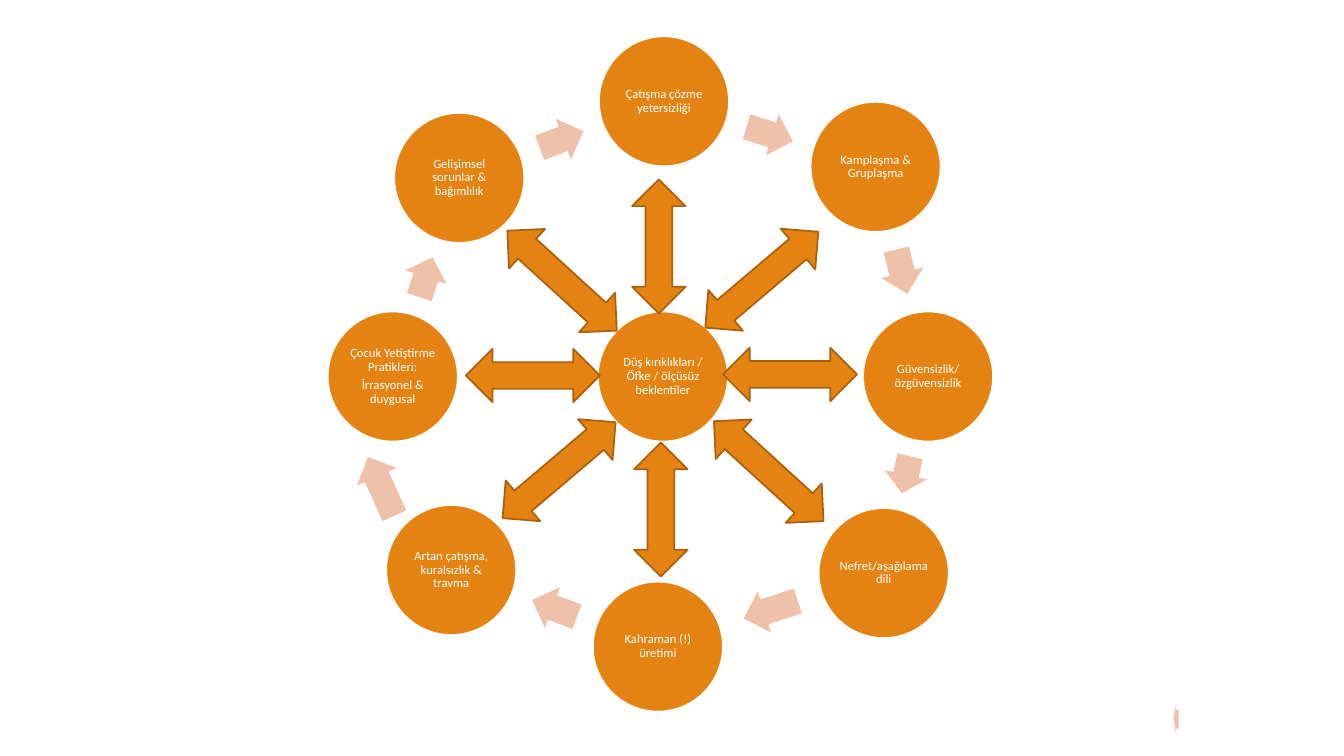
from math import atan2, degrees, hypot

from pptx import Presentation
from pptx.dml.color import RGBColor
from pptx.enum.shapes import MSO_SHAPE
from pptx.enum.text import MSO_ANCHOR, PP_ALIGN
from pptx.util import Inches, Pt

WIDTH, HEIGHT = Inches(13.33), Inches(7.5)
COLUMN, ROW = WIDTH / 100, HEIGHT / 100
COLORS = {"orange": "E48312", "brown": "A9610D", "peach": "EFC1AB", "white": "FFFFFF"}
DIAMETER = 17.2 * ROW
CYCLE_THICKNESS = 5.73 * ROW
CYCLE_GAP_SHARE = 0.53
SPOKE_THICKNESS = 7.07 * ROW
STRAIGHT_LENGTH, DIAGONAL_LENGTH = 17.73 * ROW, 19.6 * ROW

HUB = ("Düş kırıklıkları / Öfke / ölçüsüz beklentiler", 49.32, 49.8)
STAGES = [
    ("Çatışma çözme yetersizliği", 49.4, 13.4),
    ("Kamplaşma & Gruplaşma", 65.15, 22.07),
    ("Güvensizlik/ özgüvensizlik", 69.05, 49.8),
    ("Nefret/aşağılama dili", 65.75, 75.8),
    ("Kahraman (!) üretimi", 48.95, 85.53),
    ("Artan çatışma, kuralsızlık & travma", 33.57, 75.4),
    ("Çocuk Yetiştirme Pratikleri:\nİrrasyonel & duygusal", 29.22, 49.8),
    ("Gelişimsel sorunlar & bağımlılık", 34.17, 23.53),
]
TRAUMA_STAGE = 5
DIAGONAL_SPOKES = [(57.2, 62.33, 42.4), (41.82, 37.13, 42.4),
                   (41.6, 62.2, 139.7), (56.68, 37, 139.7)]
STRAIGHT_SPOKES = [(49.02, 32.6, 0), (49.17, 67.4, 0),
                   (39.65, 49.67, 90), (58.78, 49.53, 90)]


def add_centered(slide, kind, center, size, fill, outline=None, rotation=0):
    """Add a filled shape around a center point given in EMU."""
    (x, y), (width, height) = center, size
    shape = slide.shapes.add_shape(kind, round(x - width / 2), round(y - height / 2),
                                   round(width), round(height))
    shape.rotation = rotation
    shape.shadow.inherit = False
    shape.fill.solid()
    shape.fill.fore_color.rgb = RGBColor.from_string(COLORS[fill])
    if outline:
        shape.line.color.rgb = RGBColor.from_string(COLORS[outline])
        shape.line.width = Pt(1.25)
    else:
        shape.line.fill.background()
    return shape


def add_stage(slide, wording, column, row):
    """Add a labelled circle."""
    circle = add_centered(slide, MSO_SHAPE.OVAL, (column * COLUMN, row * ROW),
                          (DIAMETER, DIAMETER), "orange", "white")
    frame = circle.text_frame
    frame.word_wrap = True
    frame.vertical_anchor = MSO_ANCHOR.MIDDLE
    frame.margin_left = frame.margin_right = Inches(0.01)
    frame.margin_top = frame.margin_bottom = Inches(0.01)
    frame.text = wording
    for paragraph in frame.paragraphs:
        paragraph.alignment = PP_ALIGN.CENTER
        paragraph.line_spacing = 0.9
        paragraph.space_after = Pt(3.15)
        for run in paragraph.runs:
            run.font.name = "Calibri"
            run.font.size = Pt(9)
            run.font.color.rgb = RGBColor.from_string(COLORS["white"])


def add_cycle_arrow(slide, center, length, rotation, thickness=CYCLE_THICKNESS):
    """Add a pale arrow of the outer cycle."""
    arrow = add_centered(slide, MSO_SHAPE.RIGHT_ARROW, center, (length, thickness),
                         "peach", rotation=rotation)
    arrow.adjustments[0] = 0.6
    arrow.adjustments[1] = 0.5


def add_cycle_step(slide, start, end):
    """Add a cycle arrow midway between two stages, pointing at the second."""
    (x1, y1), (x2, y2) = [(column * COLUMN, row * ROW) for _, column, row in (start, end)]
    gap = hypot(x2 - x1, y2 - y1) - DIAMETER
    add_cycle_arrow(slide, ((x1 + x2) / 2, (y1 + y2) / 2), gap * CYCLE_GAP_SHARE,
                    degrees(atan2(y2 - y1, x2 - x1)) % 360)


def add_spokes(slide, kind, size, spokes):
    """Add the double arrows between the hub and the stages."""
    for column, row, rotation in spokes:
        add_centered(slide, kind, (column * COLUMN, row * ROW), size,
                     "orange", "brown", rotation)


def main():
    """Build the cycle slide."""
    presentation = Presentation()
    presentation.slide_width, presentation.slide_height = WIDTH, HEIGHT
    slide = presentation.slides.add_slide(presentation.slide_layouts[6])

    for index, stage in enumerate(STAGES):
        add_stage(slide, *stage)
        if index == TRAUMA_STAGE:
            add_cycle_arrow(slide, (28.36 * COLUMN, 64.33 * ROW), 8.53 * ROW, 245.8)
        else:
            add_cycle_step(slide, stage, STAGES[(index + 1) % len(STAGES)])
    add_stage(slide, *HUB)
    add_cycle_arrow(slide, (87.51 * COLUMN, 95.13 * ROW), 0.67 * ROW, 180, 4.13 * ROW)

    add_spokes(slide, MSO_SHAPE.LEFT_RIGHT_ARROW,
               (DIAGONAL_LENGTH, SPOKE_THICKNESS), DIAGONAL_SPOKES)
    add_spokes(slide, MSO_SHAPE.UP_DOWN_ARROW,
               (SPOKE_THICKNESS, STRAIGHT_LENGTH), STRAIGHT_SPOKES)
    presentation.save("out.pptx")


if __name__ == "__main__":
    main()
